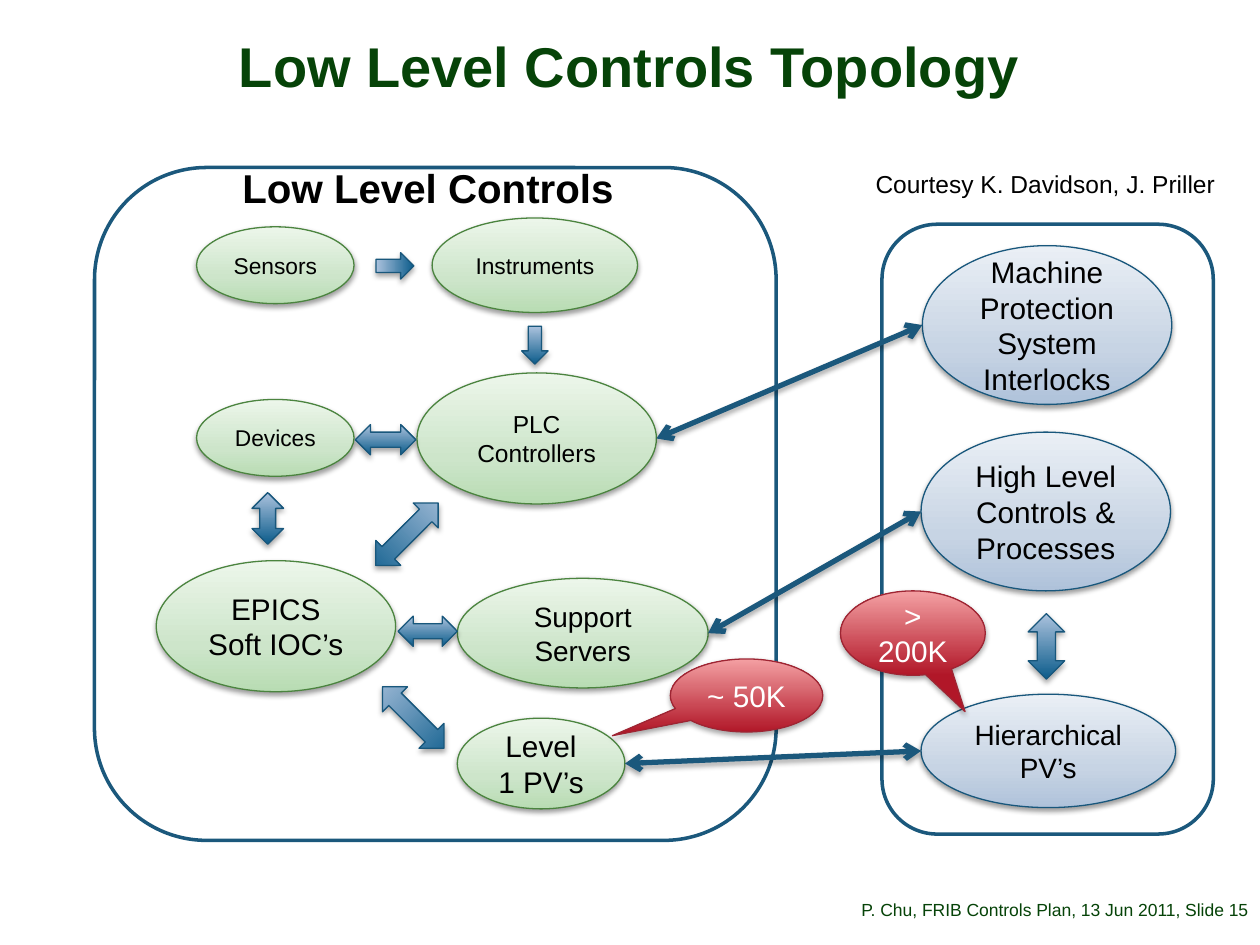
import pptx
import pptx.util
import pptx.oxml
import pptx.oxml.ns
import pptx.dml.color
import pptx.enum.shapes
import pptx.enum.text

Inches = pptx.util.Inches
Pt = pptx.util.Pt
RGB = pptx.dml.color.RGBColor
KIND = pptx.enum.shapes.MSO_SHAPE
ALIGN = pptx.enum.text.PP_ALIGN
ANCHOR = pptx.enum.text.MSO_ANCHOR
qn = pptx.oxml.ns.qn

BLACK = RGB(0x00, 0x00, 0x00)
WHITE = RGB(0xFF, 0xFF, 0xFF)
FOREST = RGB(0x06, 0x43, 0x08)
NAVY = RGB(0x1B, 0x58, 0x7C)
STEEL = RGB(0x18, 0x57, 0x7C)
LEAF = RGB(0x4B, 0x84, 0x3F)
WINE = RGB(0x9E, 0x25, 0x33)
GREENS = [(0, RGB(0xB8, 0xDC, 0xB3)), (35, RGB(0xCD, 0xE5, 0xCA)), (100, RGB(0xEC, 0xF6, 0xEA))]
BLUES = [(0, RGB(0xAF, 0xC2, 0xDA)), (35, RGB(0xC7, 0xD4, 0xE4)), (100, RGB(0xEA, 0xEF, 0xF5))]
DEEPS = [(0, RGB(0x0C, 0x5C, 0x8B)), (100, RGB(0xAB, 0xC2, 0xDD))]
REDS = [(0, RGB(0xB1, 0x17, 0x28)), (100, RGB(0xF4, 0xA0, 0xA3))]
GREEN = {"stops": GREENS, "edge": LEAF, "ink": BLACK, "alpha": 38, "drop": 1.6}
BLUE = {"stops": BLUES, "edge": STEEL, "ink": BLACK, "alpha": 38, "drop": 1.6}
DEEP = {"stops": DEEPS, "edge": STEEL, "ink": BLACK, "alpha": 35, "drop": 1.8}
RED = {"stops": REDS, "edge": WINE, "ink": WHITE, "alpha": 35, "drop": 1.8}


def place(box, part):
    """Return the slide lengths of a part given relative to its box."""
    x, y, w, h = part
    return [Inches(v) for v in (box[0] + x, box[1] + y, w, h)]


def node(tag, **attrs):
    """Make an empty drawing element."""
    item = pptx.oxml.parse_xml(f'<a:{tag} {pptx.oxml.ns.nsdecls("a")}/>')
    for name, value in attrs.items():
        item.set(name, str(value))
    return item


def tint(tag, color, alpha=None, **attrs):
    """Make a drawing element that holds one colour."""
    item, shade = node(tag, **attrs), node("srgbClr", val=color)
    if alpha:
        shade.append(node("alpha", val=alpha * 1000))
    item.append(shade)
    return item


def cast(shape, alpha, drop):
    """Give a shape or line a soft shadow below it."""
    props = shape._element.spPr
    for old in props.findall(qn("a:effectLst")):
        props.remove(old)
    glow = node("effectLst")
    glow.append(tint("outerShdw", BLACK, alpha, blurRad=int(Pt(3.1)), dist=int(Pt(drop)),
                     dir=5400000, rotWithShape=0))
    props.append(glow)


def write(shape, text, size, color, align=ALIGN.CENTER, bold=False, space=None, **frame):
    """Fill a shape with text in one style."""
    body = shape.text_frame
    layout = {"word_wrap": True, "vertical_anchor": ANCHOR.MIDDLE, **frame}
    for name, value in layout.items():
        setattr(body, name, value)
    body.text = text
    for para in body.paragraphs:
        para.alignment = align
        if space:
            para.line_spacing = space
        for name, value in {"name": "Arial", "size": Pt(size), "bold": bold}.items():
            setattr(para.font, name, value)
        para.font.color.rgb = color


def label(slide, box, part, text, size, color, **style):
    """Add a text box."""
    shape = slide.shapes.add_textbox(*place(box, part))
    write(shape, text, size, color, **style)


def blob(slide, box, kind, part, look, text="", size=0, turn=0, tip=()):
    """Add a shaded shape with a shadow and an optional text."""
    shape = slide.shapes.add_shape(kind, *place(box, part))
    shape.rotation = turn
    for i, value in enumerate(tip):
        shape.adjustments[i] = value
    shape.fill.gradient()
    shape.fill.gradient_angle = 90
    stops = shape._element.spPr.find(".//" + qn("a:gsLst"))
    for old in list(stops):
        stops.remove(old)
    for pos, color in look["stops"]:
        stops.append(tint("gs", color, pos=pos * 1000))
    shape.line.color.rgb = look["edge"]
    shape.line.width = Pt(0.75)
    cast(shape, look["alpha"], look["drop"])
    if text:
        write(shape, text, size, look["ink"])
    return shape


def panel(slide, box):
    """Add a white rounded frame that fills the box."""
    shape = slide.shapes.add_shape(KIND.ROUNDED_RECTANGLE, *place(box, (0, 0, *box[2:])))
    shape.shadow.inherit = False
    shape.fill.solid()
    shape.fill.fore_color.rgb = WHITE
    shape.line.color.rgb = NAVY
    shape.line.width = Pt(2)


def title(slide, box):
    """Add the slide title."""
    label(slide, box, (0, 0, *box[2:]), "Low Level Controls Topology", 32, FOREST,
          bold=True, space=0.88, margin_top=Inches(0.02), margin_bottom=Inches(0.02))


def footer(slide, box):
    """Add the credit line and the slide number."""
    style = {"space": 0.9, "vertical_anchor": ANCHOR.BOTTOM, "margin_left": 0, "margin_right": 0}
    label(slide, box, (0, 0, 3.17, 0.4), "P. Chu, FRIB Controls Plan, 13 Jun 2011",
          10, FOREST, align=ALIGN.RIGHT, **style)
    label(slide, box, (3.17, 0, 0.67, 0.4), ", Slide 15", 10, FOREST, align=ALIGN.LEFT, **style)


def lower(slide, box):
    """Add the low level controls and return their ovals by name."""
    panel(slide, box)
    ovals = {}
    for name, text, size, part in [
        ("sensor", "Sensors", 13, (0.81, 0.47, 1.25, 0.61)),
        ("meter", "Instruments", 13, (2.68, 0.4, 1.63, 0.75)),
        ("device", "Devices", 13, (0.81, 1.84, 1.25, 0.61)),
        ("plc", "PLC Controllers", 14, (2.56, 1.63, 1.9, 1.04)),
        ("epics", "EPICS\nSoft IOC’s", 17, (0.49, 3.12, 1.9, 1.04)),
        ("level", "Level 1 PV’s", 17, (2.88, 4.37, 1.33, 0.72)),
        ("server", "Support Servers", 16, (2.88, 3.26, 1.99, 0.87)),
    ]:
        ovals[name] = blob(slide, box, KIND.OVAL, part, GREEN, text, size)
    for kind, part, turn in [
        (KIND.DOWN_ARROW, (2.28, 0.63, 0.21, 0.3), 270),
        (KIND.DOWN_ARROW, (3.39, 1.26, 0.21, 0.3), 0),
        (KIND.LEFT_RIGHT_ARROW, (2.07, 2.04, 0.48, 0.24), 0),
        (KIND.LEFT_RIGHT_ARROW, (2.41, 3.56, 0.47, 0.24), 0),
        (KIND.UP_DOWN_ARROW, (1.25, 2.58, 0.25, 0.41), 0),
        (KIND.UP_DOWN_ARROW, (2.34, 2.56, 0.28, 0.7), 45),
        (KIND.UP_DOWN_ARROW, (2.39, 4.02, 0.28, 0.69), 315),
    ]:
        blob(slide, box, kind, part, DEEP, turn=turn)
    label(slide, box, (1.03, -0.08, 3.24, 0.48), "Low Level Controls", 23, BLACK,
          bold=True, vertical_anchor=ANCHOR.TOP)
    blob(slide, box, KIND.OVAL_CALLOUT, (4.57, 3.9, 1.21, 0.58), RED, "~ 50K", 17,
         tip=(-0.88, 0.55))
    return ovals


def upper(slide, box):
    """Add the high level systems and return their ovals by name."""
    panel(slide, box)
    ovals = {}
    for name, text, size, part in [
        ("tree", "Hierarchical PV’s", 16, (0.31, 3.73, 2.02, 0.9)),
        ("high", "High Level Controls & Processes", 17, (0.31, 1.65, 1.98, 1.26)),
        ("guard", "Machine Protection System Interlocks", 17, (0.32, 0.17, 1.98, 1.26)),
    ]:
        ovals[name] = blob(slide, box, KIND.OVAL, part, BLUE, text, size)
    blob(slide, box, KIND.UP_DOWN_ARROW, (1.16, 3.09, 0.29, 0.52), DEEP)
    blob(slide, box, KIND.OVAL_CALLOUT, (-0.33, 2.91, 1.15, 0.67), RED, "> 200K", 17,
         tip=(0.36, 0.93))
    label(slide, box, (-0.15, -0.49, 2.91, 0.34), "Courtesy K. Davidson, J. Priller", 14, BLACK,
          align=ALIGN.LEFT, word_wrap=False, vertical_anchor=ANCHOR.TOP)
    return ovals


def link(slide, right, left):
    """Join the facing sides of two ovals with a two-headed line."""
    line = slide.shapes.add_connector(
        pptx.enum.shapes.MSO_CONNECTOR.STRAIGHT,
        right.left, right.top + right.height // 2,
        left.left + left.width, left.top + left.height // 2)
    line.line.color.rgb = NAVY
    line.line.width = Pt(3)
    for end in ("headEnd", "tailEnd"):
        line.line._get_or_add_ln().append(node(end, type="arrow"))
    cast(line, 35, 1.8)


def main():
    """Build the slide and save it."""
    deck = pptx.Presentation()
    deck.slide_width, deck.slide_height = Inches(10), Inches(7.5)
    slide = deck.slides.add_slide(deck.slide_layouts[6])
    title(slide, (0.08, 0.29, 9.83, 0.52))
    footer(slide, (6.16, 6.95, 3.84, 0.4))
    near = lower(slide, (0.75, 1.33, 5.41, 5.34))
    far = upper(slide, (7, 1.78, 2.63, 4.84))
    for right, left in [("guard", "plc"), ("high", "server"), ("tree", "level")]:
        link(slide, far[right], near[left])
    deck.save("out.pptx")


if __name__ == "__main__":
    main()
